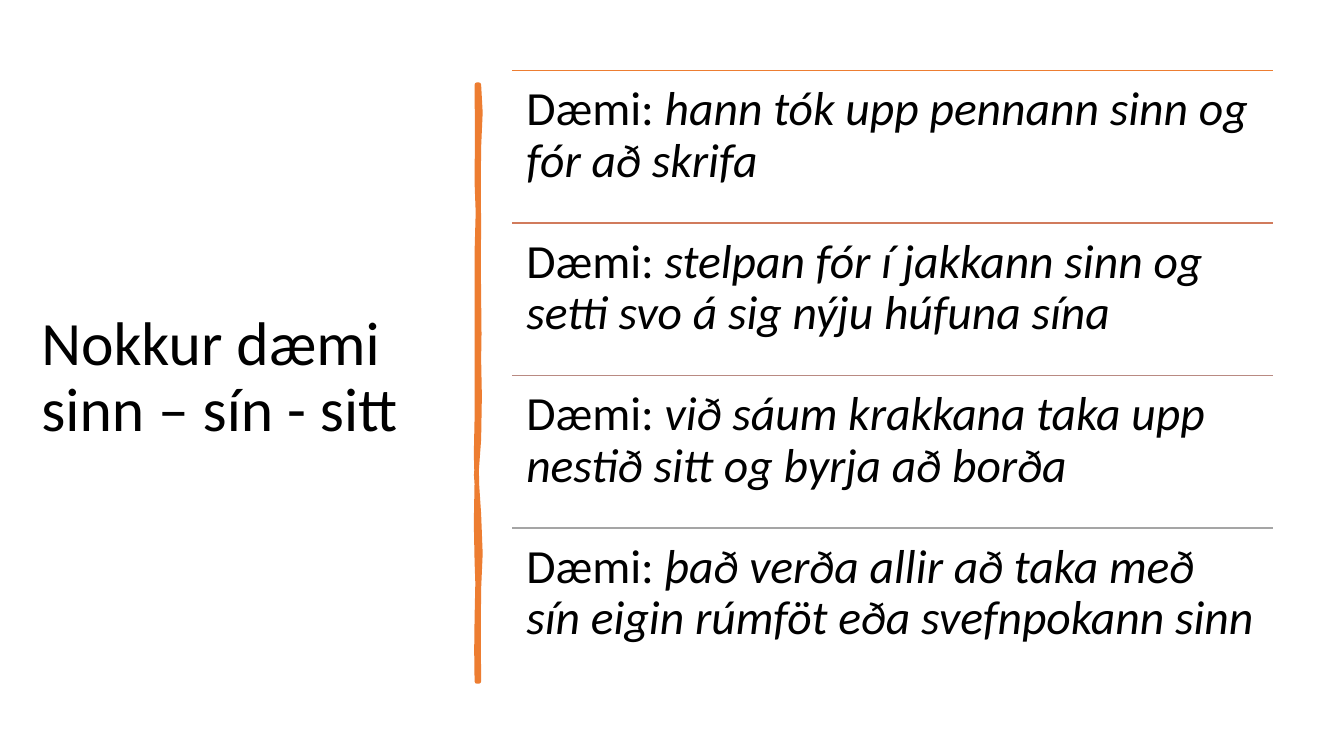
"""Build a slide of Icelandic example sentences beside a hand-drawn divider."""
from dataclasses import dataclass

from lxml.etree import SubElement
from pptx import Presentation
from pptx.dml.color import RGBColor
from pptx.enum.shapes import MSO_CONNECTOR
from pptx.enum.text import MSO_ANCHOR, PP_ALIGN
from pptx.oxml.ns import qn
from pptx.util import Inches, Pt


@dataclass(frozen=True)
class Theme:
    font: str = "Calibri"
    text: str = "000000"
    accent: str = "ED7D31"
    title_size: int = 44
    body_size: int = 34
    line_spacing: float = 0.9
    rule_width: float = 1
    divider_width: float = 3.25


THEME = Theme()
TITLE = "Nokkur dæmi sinn – sín - sitt"
LABEL = "Dæmi: "
EXAMPLES = [
    ("hann tók upp pennann sinn og fór að skrifa", "ED7D31"),
    ("stelpan fór í jakkann sinn og setti svo á sig nýju húfuna sína", "D17B5C"),
    ("við sáum krakkana taka upp nestið sitt og byrja að borða", "B98A82"),
    ("það verða allir að taka með sín eigin rúmföt eða svefnpokann sinn", "A5A5A5"),
]
LIST_LEFT, LIST_TOP, LIST_WIDTH, LIST_HEIGHT = 5.08, 0.7, 7.55, 6.05
TEXT_INSET, RIGHT_INSET = 0.14, 0.17

DIVIDER_START = (4.75, 0.84)
DIVIDER_CURVES = [
    ((4.77, 1.02), (4.77, 1.19), (4.75, 1.46)),
    ((4.73, 1.73), (4.76, 1.95), (4.75, 2.26)),
    ((4.74, 2.57), (4.75, 2.62), (4.75, 2.94)),
    ((4.74, 3.25), (4.77, 3.42), (4.75, 3.56)),
    ((4.73, 3.7), (4.79, 4.14), (4.75, 4.36)),
    ((4.71, 4.57), (4.72, 4.84), (4.75, 5.1)),
    ((4.77, 5.36), (4.77, 5.64), (4.75, 5.84)),
    ((4.73, 6.03), (4.76, 6.5), (4.75, 6.76)),
    ((4.74, 6.76), (4.73, 6.76), (4.73, 6.76)),
    ((4.74, 6.46), (4.71, 6.44), (4.73, 6.13)),
    ((4.74, 5.83), (4.74, 5.7), (4.73, 5.57)),
    ((4.72, 5.44), (4.72, 4.95), (4.73, 4.77)),
    ((4.73, 4.59), (4.71, 4.45), (4.73, 4.15)),
    ((4.74, 3.86), (4.72, 3.73), (4.73, 3.35)),
    ((4.74, 2.98), (4.72, 2.81), (4.73, 2.5)),
    ((4.74, 2.18), (4.75, 2), (4.73, 1.81)),
    ((4.7, 1.63), (4.77, 1.04), (4.73, 0.84)),
    ((4.74, 0.84), (4.74, 0.84), (4.75, 0.84)),
]
CURVE_STEPS = 2


def color(code):
    return RGBColor.from_string(code)


def style(paragraph, size):
    paragraph.alignment = PP_ALIGN.LEFT
    paragraph.line_spacing = THEME.line_spacing
    paragraph.font.name = THEME.font
    paragraph.font.size = Pt(size)
    paragraph.font.color.rgb = color(THEME.text)


def add_title(page):
    title = page.shapes.title
    title.left, title.top = Inches(0.31), Inches(0.7)
    title.width, title.height = Inches(4.13), Inches(6.11)
    title.text_frame.text = TITLE
    title.text_frame.vertical_anchor = MSO_ANCHOR.MIDDLE
    style(title.text_frame.paragraphs[0], THEME.title_size)


def curve_points(start, curves):
    points = []
    for first, second, end in curves:
        for step in range(1, CURVE_STEPS + 1):
            t = step / CURVE_STEPS
            weights = ((1 - t) ** 3, 3 * t * (1 - t) ** 2, 3 * t**2 * (1 - t), t**3)
            corners = (start, first, second, end)
            points.append(tuple(
                Inches(sum(w * corner[axis] for w, corner in zip(weights, corners)))
                for axis in (0, 1)
            ))
        start = end
    return points


def add_divider(page):
    builder = page.shapes.build_freeform(*map(Inches, DIVIDER_START))
    builder.add_line_segments(curve_points(DIVIDER_START, DIVIDER_CURVES))
    divider = builder.convert_to_shape()
    divider.shadow.inherit = False
    divider.fill.solid()
    divider.fill.fore_color.rgb = color(THEME.accent)
    divider.line.color.rgb = color(THEME.accent)
    divider.line.width = Pt(THEME.divider_width)


def add_rule(page, top, rule_color):
    left, right = Inches(LIST_LEFT), Inches(LIST_LEFT + LIST_WIDTH)
    rule = page.shapes.add_connector(MSO_CONNECTOR.STRAIGHT, left, top, right, top)
    rule.line.color.rgb = color(rule_color)
    rule.line.width = Pt(THEME.rule_width)
    SubElement(rule.element.spPr, qn("a:effectLst"))


def add_example(page, top, height, sentence):
    box = page.shapes.add_textbox(Inches(LIST_LEFT), top, Inches(LIST_WIDTH), height)
    frame = box.text_frame
    frame.word_wrap = True
    frame.margin_left = frame.margin_top = frame.margin_bottom = Inches(TEXT_INSET)
    frame.margin_right = Inches(RIGHT_INSET)
    para = frame.paragraphs[0]
    style(para, THEME.body_size)
    para.add_run().text = LABEL
    span = para.add_run()
    span.text = sentence
    span.font.italic = True


def main():
    deck = Presentation()
    deck.slide_width, deck.slide_height = Inches(13.33), Inches(7.5)
    page = deck.slides.add_slide(deck.slide_layouts[5])
    add_title(page)
    add_divider(page)
    row_height = LIST_HEIGHT / len(EXAMPLES)
    for row, (sentence, rule_color) in enumerate(EXAMPLES):
        top = Inches(LIST_TOP + row * row_height)
        add_rule(page, top, rule_color)
        add_example(page, top, Inches(row_height), sentence)
    deck.save("out.pptx")


if __name__ == "__main__":
    main()
